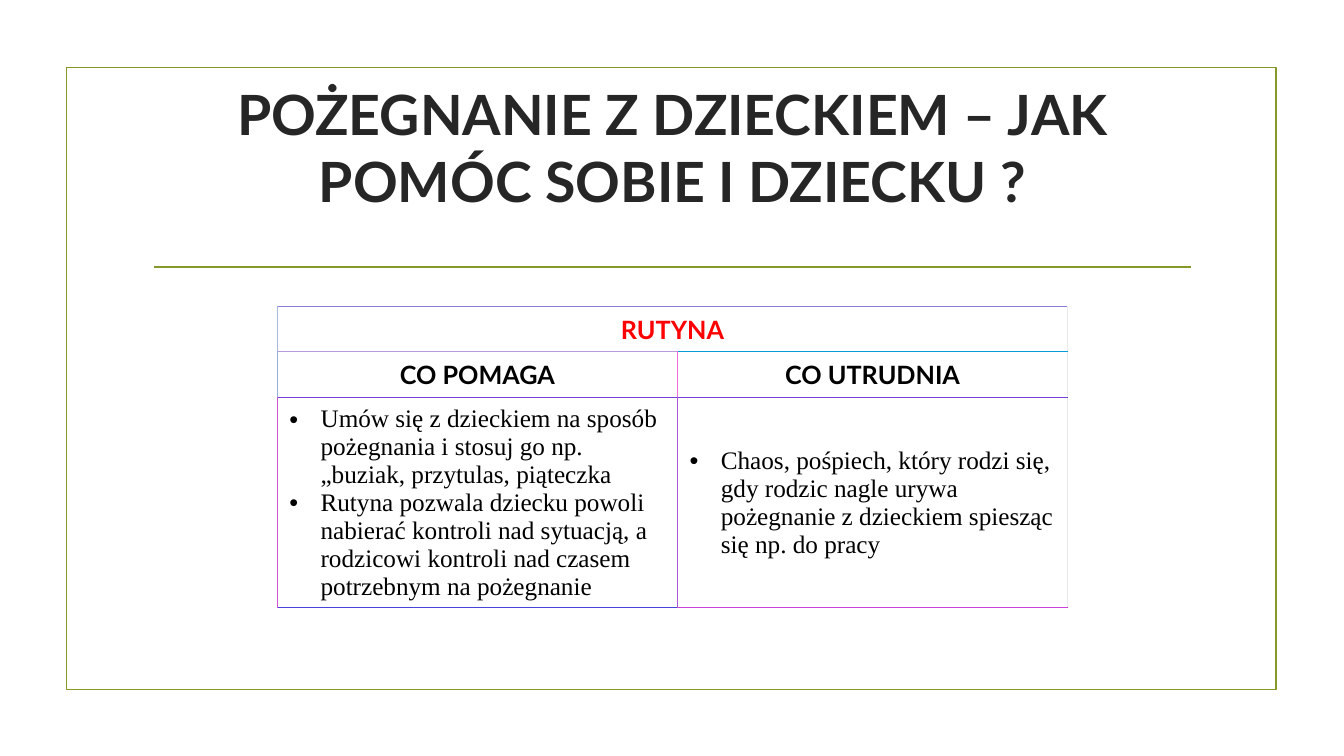
import copy
import pptx
import pptx.dml.color
import pptx.enum.shapes
import pptx.enum.text
import pptx.oxml
import pptx.oxml.ns
import pptx.util
from pptx.util import Inches

Align = pptx.enum.text.PP_ALIGN
Anchor = pptx.enum.text.MSO_ANCHOR
NS = pptx.oxml.ns.nsdecls("a")


def rgb(code):
    return pptx.dml.color.RGBColor.from_string(code)


THEME = {
    "olive": "83992A",
    "white": "FFFFFF",
    "rule": 1.25,
    "edge": 0.6,
    "title": {"name": "Lato", "size": 39.6, "bold": True, "color": "262626"},
    "topic": {"name": "Lato", "size": 18, "bold": True, "color": "FF0000"},
    "head": {"name": "Lato", "size": 18, "bold": True, "color": "000000"},
    "list": {"name": "Times New Roman", "size": 18, "bold": False, "color": "000000"},
}

TITLE = "POŻEGNANIE Z DZIECKIEM – JAK POMÓC SOBIE I DZIECKU ?\v"
SIDES = ("L", "R", "T", "B")
ROWS = [
    ("topic", [(["RUTYNA"], "A8B8D9 E9E9E9 887BD9 B89CD9")]),
    ("head", [
        (["CO POMAGA"], "98B0D9 F06DD9 B89CD9 7843D9"),
        (["CO UTRUDNIA"], "F06DD9 E9E9E9 089BD9 7843D9"),
    ]),
    ("list", [
        ([
            "Umów się z dzieckiem na sposób pożegnania i stosuj go np. „buziak, przytulas, piąteczka",
            "Rutyna pozwala dziecku powoli nabierać kontroli nad sytuacją, a rodzicowi kontroli nad czasem potrzebnym na pożegnanie",
        ], "D054D9 B056D9 7843D9 4843D9"),
        ([
            "Chaos, pośpiech, który rodzi się, gdy rodzic nagle urywa pożegnanie z dzieckiem spiesząc się np. do pracy",
        ], "B056D9 E9E9E9 7843D9 C844D9"),
    ]),
]


class Deck:
    def __init__(self, theme):
        self.theme = theme
        self.file = pptx.Presentation()
        self.file.slide_width = Inches(13.33)
        self.file.slide_height = Inches(7.5)
        self.slide = self.file.slides.add_slide(self.file.slide_layouts[5])

    def assign(self, thing, values):
        for key, value in values.items():
            setattr(thing, key, value)

    def style(self, run, kind):
        look = dict(self.theme[kind])
        run.font.color.rgb = rgb(look.pop("color"))
        look["size"] = pptx.util.Pt(look["size"])
        self.assign(run.font, look)

    def stroke(self, line):
        line.color.rgb = rgb(self.theme["olive"])
        line.width = pptx.util.Pt(self.theme["rule"])

    def frame(self, *box):
        kind = pptx.enum.shapes.MSO_SHAPE.RECTANGLE
        shape = self.slide.shapes.add_shape(kind, *map(Inches, box))
        shape.shadow.inherit = False
        shape.fill.background()
        self.stroke(shape.line)

    def rule(self, *ends):
        kind = pptx.enum.shapes.MSO_CONNECTOR.STRAIGHT
        line = self.slide.shapes.add_connector(kind, *map(Inches, ends))
        line._element.spPr.append(pptx.oxml.parse_xml(f"<a:effectLst {NS}/>"))
        self.stroke(line.line)

    def title(self, text, *box):
        shape = self.slide.shapes.title
        self.assign(shape, dict(zip(("left", "top", "width", "height"), map(Inches, box))))
        self.assign(shape.text_frame, {
            "text": text,
            "word_wrap": True,
            "auto_size": pptx.enum.text.MSO_AUTO_SIZE.NONE,
            "vertical_anchor": Anchor.MIDDLE,
        })
        para = shape.text_frame.paragraphs[0]
        para.alignment = Align.CENTER
        run = para.runs[0]
        self.style(run, "title")
        for gap in para._p.findall(pptx.oxml.ns.qn("a:br")):
            gap.append(copy.deepcopy(run._r.rPr))

    def bullet(self, para):
        props = para._p.get_or_add_pPr()
        props.set("marL", str(Inches(0.31)))
        props.set("indent", str(-Inches(0.31)))
        for tag in ('buFont typeface="Arial"', 'buChar char="•"'):
            name, rest = tag.split(" ", 1)
            props.append(pptx.oxml.parse_xml(f"<a:{name} {NS} {rest}/>"))

    def border(self, cell, codes):
        props = cell._tc.get_or_add_tcPr()
        width = pptx.util.Pt(self.theme["edge"])
        for side, code in zip(SIDES, codes.split()):
            props.append(pptx.oxml.parse_xml(
                f'<a:ln{side} {NS} w="{width}"><a:solidFill>'
                f'<a:srgbClr val="{code}"/></a:solidFill></a:ln{side}>'))

    def cell(self, cell, kind, lines, codes):
        self.assign(cell, {
            "margin_left": Inches(0.12), "margin_right": Inches(0.12),
            "margin_top": Inches(0.08), "margin_bottom": Inches(0.07),
            "vertical_anchor": Anchor.MIDDLE, "text": "\n".join(lines),
        })
        self.border(cell, codes)
        cell.fill.solid()
        cell.fill.fore_color.rgb = rgb(self.theme["white"])
        for para in cell.text_frame.paragraphs:
            if kind == "list":
                self.bullet(para)
            else:
                para.alignment = Align.CENTER
            self.style(para.runs[0], kind)

    def table(self, rows, left, top, widths, heights):
        box = map(Inches, (left, top, sum(widths), sum(heights)))
        grid = self.slide.shapes.add_table(len(heights), len(widths), *box).table
        self.assign(grid, {"first_row": False, "horz_banding": False})
        for col, width in zip(grid.columns, widths):
            col.width = Inches(width)
        for row, height in zip(grid.rows, heights):
            row.height = Inches(height)
        for r, (kind, cells) in enumerate(rows):
            if len(cells) < len(widths):
                grid.cell(r, 0).merge(grid.cell(r, len(widths) - 1))
            for c, (lines, codes) in enumerate(cells):
                self.cell(grid.cell(r, c), kind, lines, codes)


def main():
    deck = Deck(THEME)
    deck.frame(0.66, 0.67, 12, 6.17)
    deck.rule(1.53, 2.65, 11.81, 2.65)
    deck.title(TITLE, 1.42, 1.07, 10.5, 1.43)
    deck.table(ROWS, 2.75, 3.04, (3.97, 3.87), (0.45, 0.45, 2.09))
    deck.file.save("out.pptx")


if __name__ == "__main__":
    main()
